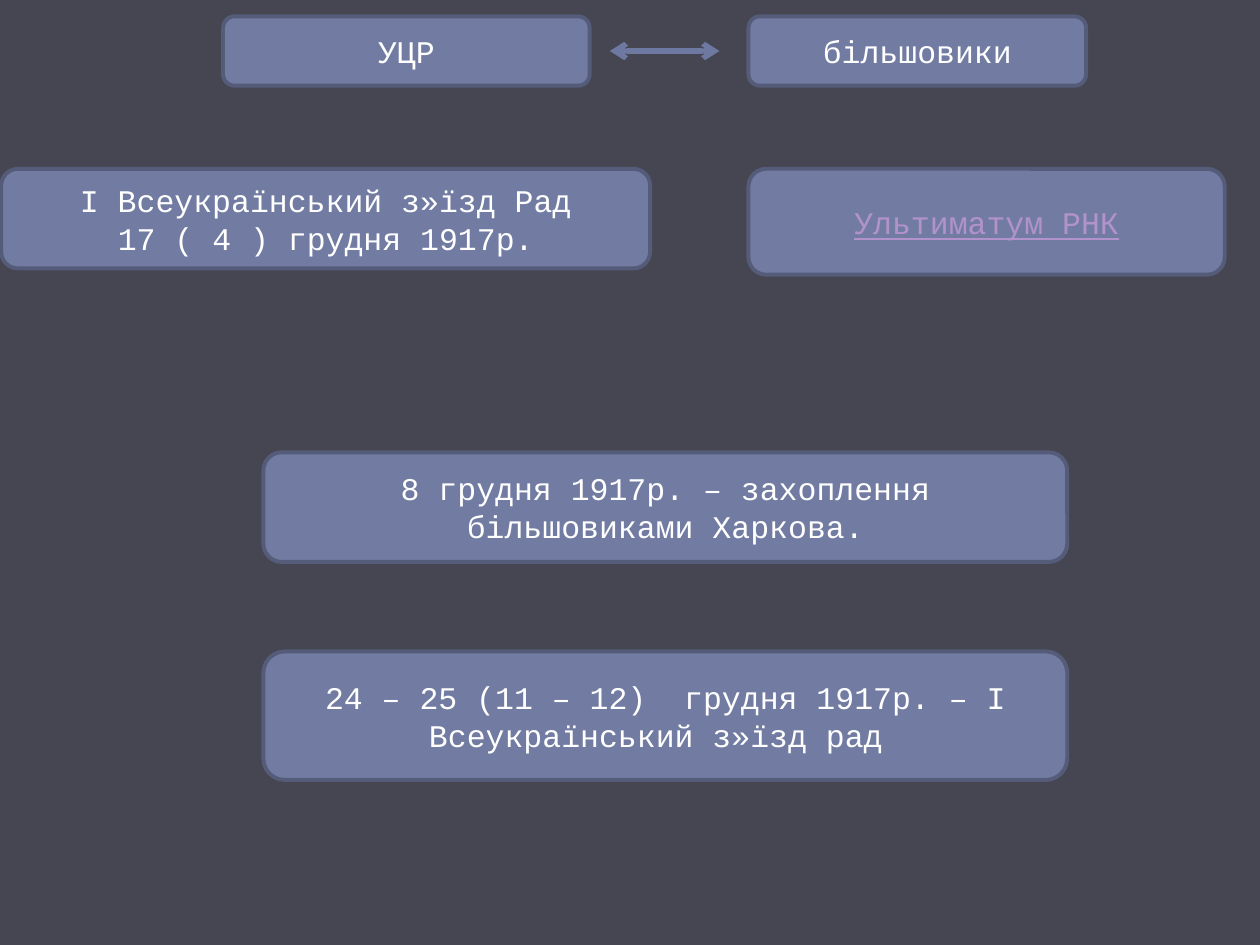
from dataclasses import dataclass

from pptx import Presentation
from pptx.dml.color import RGBColor
from pptx.enum.shapes import MSO_CONNECTOR, MSO_SHAPE
from pptx.enum.text import MSO_ANCHOR, PP_ALIGN
from pptx.oxml.ns import qn
from pptx.oxml.xmlchemy import OxmlElement
from pptx.slide import Slide
from pptx.util import Inches, Pt

BACKGROUND = RGBColor(0x46, 0x46, 0x53)
BOX_FILL = RGBColor(0x72, 0x7C, 0xA3)
BOX_BORDER = RGBColor(0x54, 0x5C, 0x79)
ARROW_COLOR = RGBColor(0x6E, 0x79, 0xA1)
WHITE = RGBColor(0xFF, 0xFF, 0xFF)
LILAC = RGBColor(0xB2, 0x92, 0xCA)

SIDES_TOP, SIDES_HEIGHT = 0.13, 0.55
ACTIONS_TOP = 1.34
BOLSHEVIKS_LEFT = 5.94
EVENTS_LEFT, EVENTS_WIDTH = 2.09, 6.38


@dataclass(frozen=True)
class Box:
    left: float
    top: float
    width: float
    height: float
    lines: tuple[str, ...]
    color: RGBColor = WHITE
    underlined: bool = False


BOXES = (
    Box(0.01, ACTIONS_TOP, 5.15, 0.79,
        ("І Всеукраїнський з»їзд Рад", "17 ( 4 ) грудня 1917р.")),
    Box(1.77, SIDES_TOP, 2.91, SIDES_HEIGHT, ("УЦР",)),
    Box(BOLSHEVIKS_LEFT, SIDES_TOP, 2.68, SIDES_HEIGHT, ("більшовики",)),
    Box(BOLSHEVIKS_LEFT, ACTIONS_TOP, 3.78, 0.84, ("Ультиматум РНК",), LILAC, True),
    Box(EVENTS_LEFT, 3.59, EVENTS_WIDTH, 0.87,
        ("8 грудня 1917р. – захоплення більшовиками Харкова.",)),
    Box(EVENTS_LEFT, 5.17, EVENTS_WIDTH, 1.02,
        ("24 – 25 (11 – 12)  грудня 1917р. – І Всеукраїнський з»їзд рад ",)),
)


def draw_box(slide: Slide, box: Box) -> None:
    shape = slide.shapes.add_shape(
        MSO_SHAPE.ROUNDED_RECTANGLE, Inches(box.left), Inches(box.top),
        Inches(box.width), Inches(box.height))
    shape.shadow.inherit = False
    shape.fill.solid()
    shape.fill.fore_color.rgb = BOX_FILL
    shape.line.color.rgb = BOX_BORDER
    shape.line.width = Pt(2.25)

    frame = shape.text_frame
    frame.word_wrap = True
    frame.vertical_anchor = MSO_ANCHOR.MIDDLE
    for index, line in enumerate(box.lines):
        paragraph = frame.add_paragraph() if index else frame.paragraphs[0]
        paragraph.alignment = PP_ALIGN.CENTER
        run = paragraph.add_run()
        run.text = line
        run.font.name = "Courier New"
        run.font.size = Pt(18)
        run.font.color.rgb = box.color
        if box.underlined:
            run.font.underline = True


def draw_double_arrow(slide: Slide, left: float, right: float, y: float) -> None:
    arrow = slide.shapes.add_connector(
        MSO_CONNECTOR.STRAIGHT, Inches(left), Inches(y), Inches(right), Inches(y))
    arrow.line.color.rgb = ARROW_COLOR
    arrow.line.width = Pt(3)
    properties = arrow.element.find(qn("p:spPr"))
    outline = properties.find(qn("a:ln"))
    for end in ("a:headEnd", "a:tailEnd"):
        arrowhead = OxmlElement(end)
        arrowhead.set("type", "arrow")
        outline.append(arrowhead)
    properties.append(OxmlElement("a:effectLst"))


def main() -> None:
    presentation = Presentation()
    presentation.slide_width = Inches(10)
    presentation.slide_height = Inches(7.5)
    slide = presentation.slides.add_slide(presentation.slide_layouts[6])
    slide.background.fill.solid()
    slide.background.fill.fore_color.rgb = BACKGROUND

    for box in BOXES:
        draw_box(slide, box)
    draw_double_arrow(slide, 4.84, 5.71, SIDES_TOP + SIDES_HEIGHT / 2)
    presentation.save("out.pptx")


if __name__ == "__main__":
    main()
